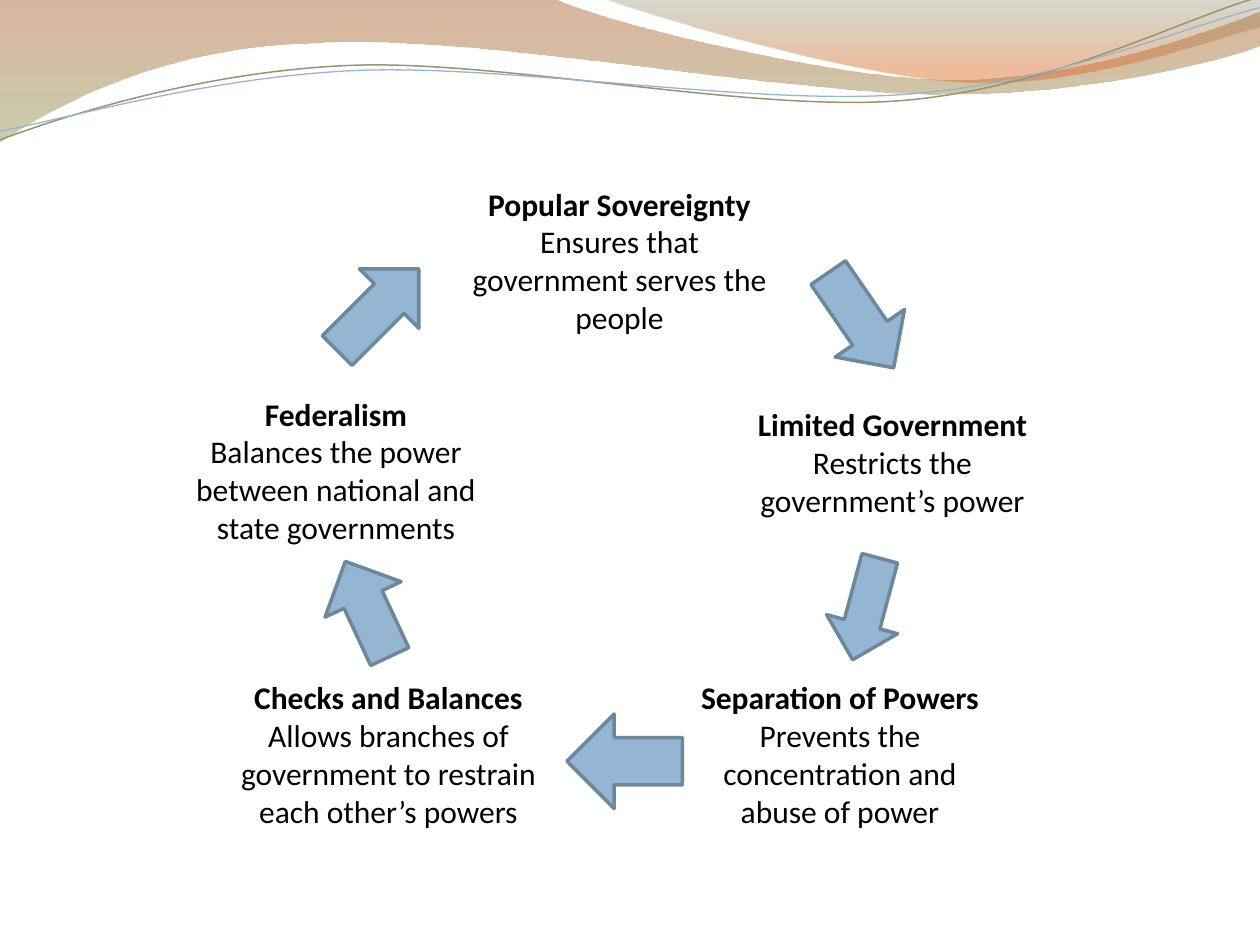
from math import cos, radians, sin

from lxml.etree import SubElement
from pptx import Presentation
from pptx.dml.color import RGBColor
from pptx.enum.shapes import MSO_SHAPE
from pptx.enum.text import MSO_AUTO_SIZE, PP_ALIGN
from pptx.oxml.ns import qn
from pptx.util import Pt

BLACK = RGBColor(0x00, 0x00, 0x00)
BLUE = RGBColor(0x94, 0xB6, 0xD2)
SLATE = RGBColor(0x6D, 0x87, 0x9B)
OLIVE = RGBColor(0x92, 0x97, 0x72)
RUST = RGBColor(0xAF, 0x5C, 0x29)
MOSS = RGBColor(0x9D, 0xA6, 0x6B)
SAGE = RGBColor(0x7D, 0x83, 0x5B)
ORANGE = RGBColor(0xDD, 0x6B, 0x24)

# Each band and wave has a box (left, top, width, height) and outline steps:
# two numbers are a line to a point, six are a Bezier curve.
# Gradient stops: position, colour, opacity in percent.
BANDS = [
    ((-0.7, -0.7, 721.4, 82.1),
     [(0, 0), (316.8, -0.7), (342.7, 12.2, 478.1, 45.4, 545.8, 45.4),
      (614.2, 45.4, 689.8, 18.7, 720, 6.5), (720.7, 25.9),
      (707.8, 31.7, 626.4, 54.7, 537.1, 54),
      (447.8, 54, 275, 20.2, 185, 24.5),
      (92.9, 25.9, 33.1, 59.8, -0.7, 81.4)],
     [(0, RUST, 45), (1, MOSS, 55)]),
    ((344.9, -0.7, 375.1, 50.4),
     [(344.9, -0.7), (366.5, 7.9, 491, 44.6, 553.7, 46.8),
      (616.3, 49.7, 691.9, 23, 720, 15.1), (720, 0)],
     [(0, SAGE, 30), (0.8, ORANGE, 45)]),
]
WAVES = [
    ((-1.4, 15.8, 721.4, 51.1),
     [(0, 79.9), (34.6, 67, 113.8, 41, 199.4, 37.4),
      (284.4, 33.8, 427, 64.1, 513.4, 57.6),
      (599.8, 51.1, 675.4, 10.8, 718.6, -1.4)], OLIVE, 0.85),
    ((-1.4, 21.6, 722.2, 41.8),
     [(0, 74.9), (33.8, 69.1, 118.1, 43.9, 203.8, 40.3),
      (290.2, 36.7, 429.8, 60.5, 516.2, 54),
      (601.9, 48.2, 677.5, 15.1, 720, 4.3)], BLUE, 0.75),
]
TILT = -2.7

# Left, top, height, heading, text
IDEAS = [
    (258, 102, 94.5, "Popular Sovereignty",
     "Ensures that government serves the people"),
    (414, 228, 72.7, "Limited Government",
     "Restricts the government’s power"),
    (384, 384, 94.5, "Separation of Powers",
     "Prevents the concentration and abuse of power"),
    (126, 384, 94.5, "Checks and Balances",
     "Allows branches of government to restrain each other’s powers"),
    (96, 222, 94.5, "Federalism",
     "Balances the power between national and state governments"),
]
WIDTH = 192

# Shape, left, top, width, height, turn in degrees
ARROWS = [
    (MSO_SHAPE.DOWN_ARROW, 474, 318, 42, 60, 15),
    (MSO_SHAPE.LEFT_ARROW, 324, 408, 66, 54, 0),
    (MSO_SHAPE.UP_ARROW, 186, 318, 48, 60, -25),
    (MSO_SHAPE.UP_ARROW, 192, 144, 48, 66, 45),
    (MSO_SHAPE.DOWN_ARROW, 468, 150, 48, 66, -34.5),
]

FRAME = {"word_wrap": True, "auto_size": MSO_AUTO_SIZE.SHAPE_TO_FIT_TEXT}
FONT = {"name": "Calibri", "size": Pt(18)}


def apply(item, values):
    for name, value in values.items():
        setattr(item, name, value)


def draw(slide, box, steps, close, turn=0):
    """Add a freeform whose steps show in place once it is turned."""
    left, top, width, height = box
    pen = slide.shapes.build_freeform(Pt(left), Pt(top))
    pen.add_line_segments([(Pt(left + width), Pt(top + height))], close=False)
    shape = pen.convert_to_shape()
    shape.shadow.inherit = False
    shape.rotation = turn

    c, s = cos(radians(-turn)), sin(radians(-turn))
    trail = next(shape.element.iter(qn("a:path")))
    for part in list(trail):
        trail.remove(part)
    for i, step in enumerate(steps):
        kind = "cubicBezTo" if len(step) == 6 else "lnTo" if i else "moveTo"
        node = SubElement(trail, qn("a:" + kind))
        for x, y in zip(step[::2], step[1::2]):
            dx, dy = x - left - width / 2, y - top - height / 2
            spot = SubElement(node, qn("a:pt"))
            spot.set("x", str(Pt(width / 2 + dx * c - dy * s)))
            spot.set("y", str(Pt(height / 2 + dx * s + dy * c)))
    if close:
        SubElement(trail, qn("a:close"))
    return shape


def stroke(shape, color, width):
    shape.line.color.rgb = color
    shape.line.width = Pt(width)


def add_band(slide, box, steps, stops):
    band = draw(slide, box, steps, True)
    band.line.fill.background()
    band.fill.gradient()
    band.fill.gradient_angle = 270
    for stop, (place, color, _) in zip(band.fill.gradient_stops, stops):
        stop.position = place
        stop.color.rgb = color
    tints = band.element.spPr.iter(qn("a:srgbClr"))
    for tint, (_, _, alpha) in zip(tints, stops):
        SubElement(tint, qn("a:alpha")).set("val", str(alpha * 1000))


def add_wave(slide, box, steps, color, width):
    wave = draw(slide, box, steps, False, TILT)
    wave.fill.background()
    stroke(wave, color, width)


def add_idea(slide, left, top, height, head, text):
    box = slide.shapes.add_textbox(Pt(left), Pt(top), Pt(WIDTH), Pt(height))
    frame = box.text_frame
    apply(frame, FRAME)
    for para, words, bold in ((frame.paragraphs[0], head, True),
                              (frame.add_paragraph(), text, False)):
        para.alignment = PP_ALIGN.CENTER
        run = para.add_run()
        run.text = words
        apply(run.font, {**FONT, "bold": bold})
        run.font.color.rgb = BLACK


def add_arrow(slide, kind, left, top, width, height, turn):
    arrow = slide.shapes.add_shape(
        kind, Pt(left), Pt(top), Pt(width), Pt(height))
    arrow.rotation = turn
    arrow.shadow.inherit = False
    arrow.fill.solid()
    arrow.fill.fore_color.rgb = BLUE
    stroke(arrow, SLATE, 2)


def main():
    deck = Presentation()
    apply(deck, {"slide_width": Pt(720), "slide_height": Pt(540)})
    slide = deck.slides.add_slide(deck.slide_layouts[6])
    for add, rows in ((add_band, BANDS), (add_wave, WAVES),
                      (add_idea, IDEAS), (add_arrow, ARROWS)):
        for row in rows:
            add(slide, *row)
    deck.save("out.pptx")


if __name__ == "__main__":
    main()
